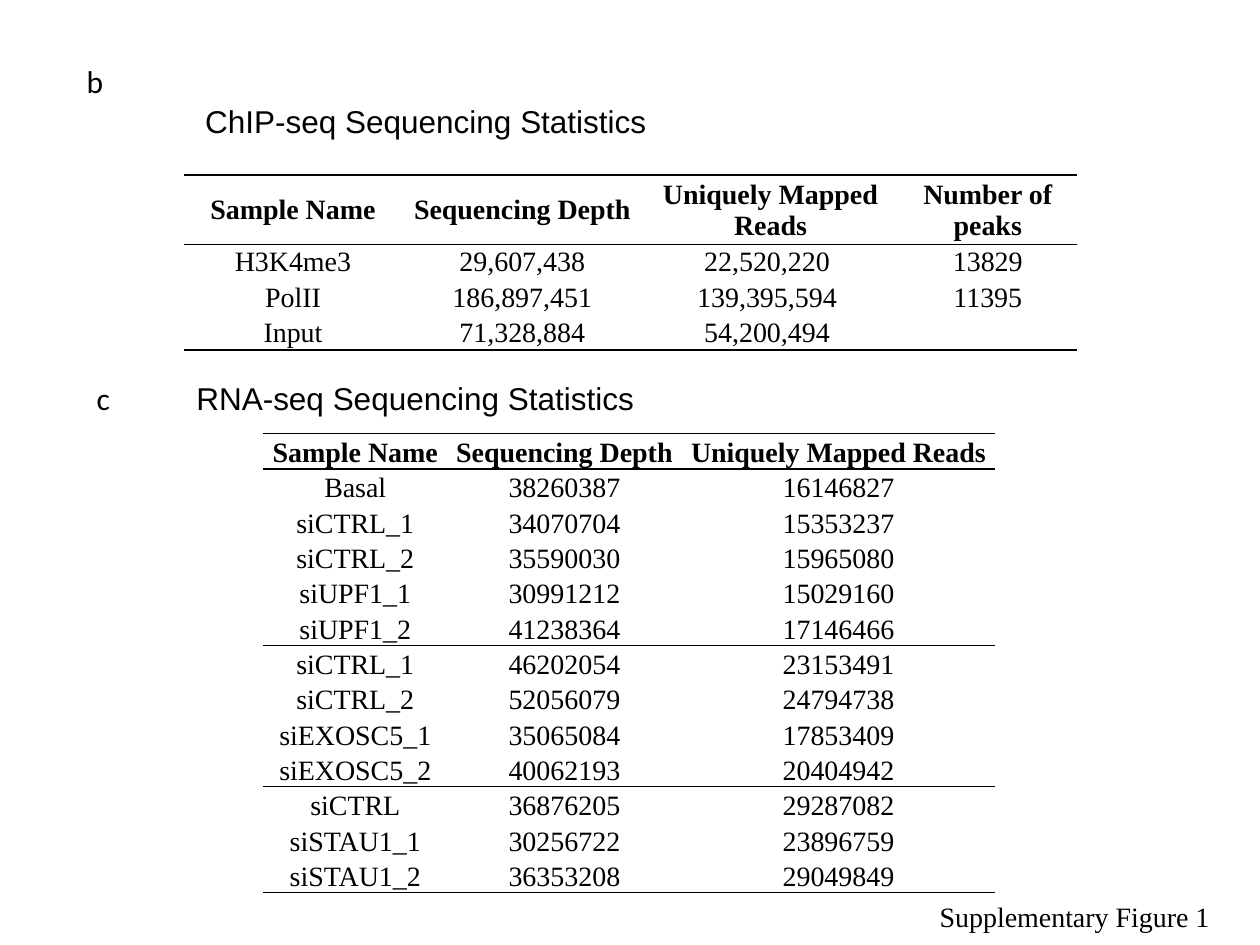
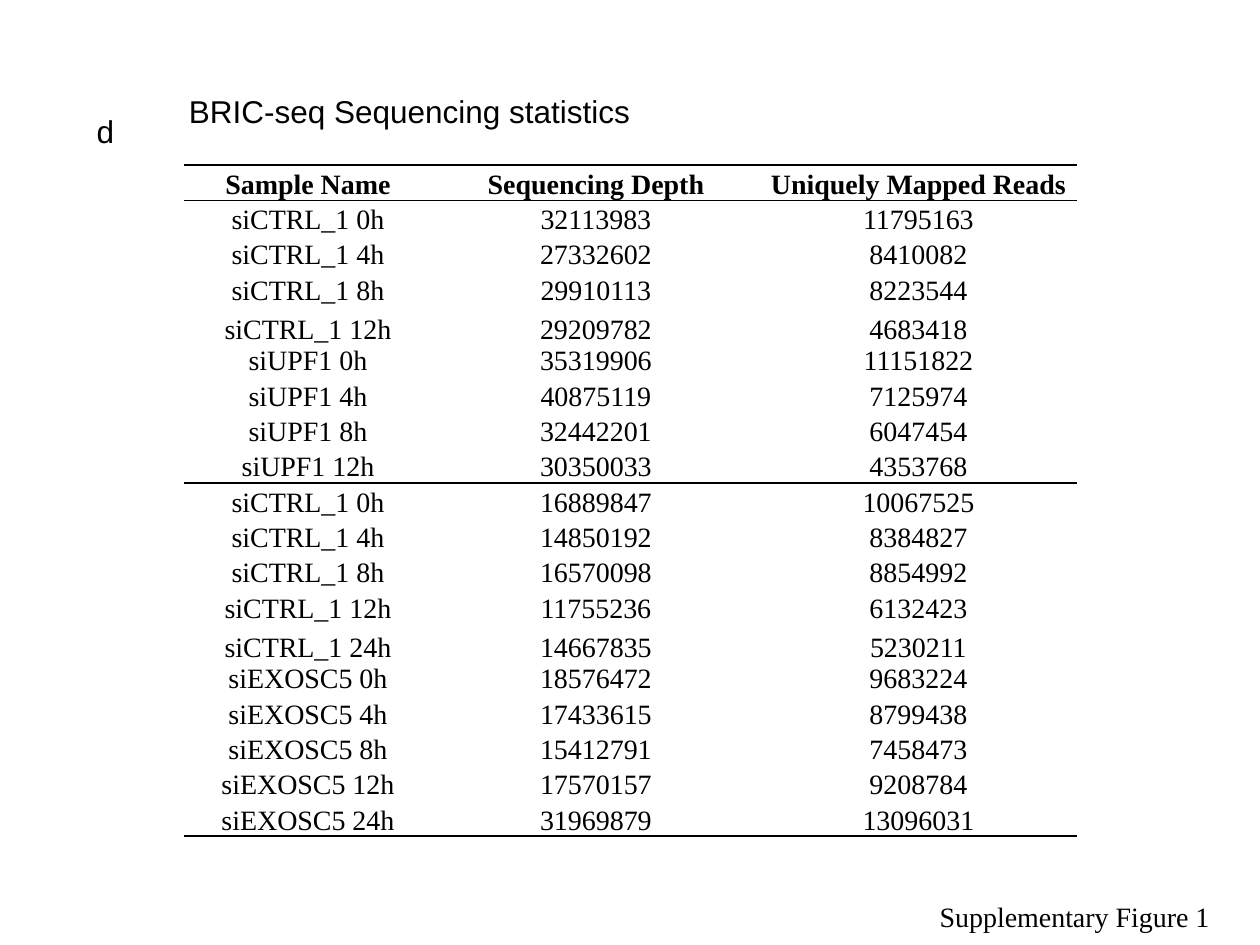
from dataclasses import dataclass

from lxml import etree
from pptx import Presentation
from pptx.dml.color import RGBColor
from pptx.enum.text import MSO_ANCHOR, MSO_AUTO_SIZE, PP_ALIGN
from pptx.oxml.ns import qn
from pptx.slide import Slide
from pptx.table import _Cell
from pptx.util import Pt

LEFT, CENTER = PP_ALIGN.LEFT, PP_ALIGN.CENTER
MIDDLE, BOTTOM = MSO_ANCHOR.MIDDLE, MSO_ANCHOR.BOTTOM
FIT_SHAPE = MSO_AUTO_SIZE.SHAPE_TO_FIT_TEXT


@dataclass(frozen=True)
class Theme:
    ink: str = "000000"
    paper: str = "FFFFFF"
    title_font: str = "Arial"
    letter_font: str = "Calibri"
    table_font: str = "Times New Roman"
    title_size: float = 18
    table_size: float = 16
    rule_width: float = 1
    row_height: float = 20.2


THEME = Theme()


@dataclass(frozen=True)
class Label:
    text: str
    left: float
    top: float
    width: float
    height: float = 28.8
    font: str = THEME.title_font
    size: float = THEME.title_size
    align: PP_ALIGN = LEFT


@dataclass(frozen=True)
class Statistics:
    left: float
    top: float
    columns: tuple[float, ...]
    rows: list[tuple[str, ...]]
    ruled_rows: set[int]
    filled_from: int
    header_height: float = THEME.row_height
    anchor: MSO_ANCHOR = BOTTOM


HEADINGS = ("Sample Name", "Sequencing Depth", "Uniquely Mapped Reads")

CHIP_SEQ = Statistics(
    105.1, 100.1, (124.6, 137.5, 146.2, 102.2),
    [
        (*HEADINGS, "Number of peaks"),
        ("H3K4me3", "29,607,438", "22,520,220 ", "13829"),
        ("PolII", "186,897,451", "139,395,594 ", "11395"),
        ("Input", "71,328,884", "54,200,494 ", ""),
    ],
    ruled_rows={0, 3}, filled_from=0, header_height=39.5, anchor=MIDDLE,
)

RNA_SEQ = Statistics(
    150.5, 247.7, (105.1, 133.9, 179.3),
    [
        HEADINGS,
        ("Basal", "38260387", "16146827"),
        ("siCTRL_1", "34070704", "15353237"),
        ("siCTRL_2", "35590030", "15965080"),
        ("siUPF1_1", "30991212", "15029160"),
        ("siUPF1_2", "41238364", "17146466"),
        ("siCTRL_1", "46202054", "23153491"),
        ("siCTRL_2", "52056079", "24794738"),
        ("siEXOSC5_1", "35065084", "17853409"),
        ("siEXOSC5_2", "40062193", "20404942"),
        ("siCTRL", "36876205", "29287082"),
        ("siSTAU1_1", "30256722", "23896759"),
        ("siSTAU1_2", "36353208", "29049849"),
    ],
    ruled_rows={0, 5, 9, 12}, filled_from=10,
)

BRIC_SEQ = Statistics(
    105.1, 94.3, (141.8, 187.2, 181.4),
    [
        HEADINGS,
        ("siCTRL_1 0h", "32113983", "11795163"),
        ("siCTRL_1 4h", "27332602", "8410082"),
        ("siCTRL_1 8h", "29910113", "8223544"),
        ("siCTRL_1 12h\nsiUPF1 0h", "29209782\n35319906", "4683418\n11151822"),
        ("siUPF1 4h", "40875119", "7125974"),
        ("siUPF1 8h", "32442201", "6047454"),
        ("siUPF1 12h", "30350033", "4353768"),
        ("siCTRL_1 0h", "16889847", "10067525"),
        ("siCTRL_1 4h", "14850192", "8384827"),
        ("siCTRL_1 8h", "16570098", "8854992"),
        ("siCTRL_1 12h", "11755236", "6132423"),
        ("siCTRL_1 24h\nsiEXOSC5 0h", "14667835\n18576472", "5230211\n9683224"),
        ("siEXOSC5 4h", "17433615", "8799438"),
        ("siEXOSC5 8h", "15412791", "7458473"),
        ("siEXOSC5 12h", "17570157", "9208784"),
        ("siEXOSC5 24h", "31969879", "13096031"),
    ],
    ruled_rows={0, 7, 16}, filled_from=17,
)

FIGURE_LABEL = Label("Supplementary Figure 1", 529.9, 510.5, 170.6, 26.6,
                     THEME.table_font, THEME.table_size)

FIGURE_SLIDES = [
    [
        Label("ChIP-seq Sequencing Statistics", 110.2, 54.7, 269.3),
        Label("b", 42.5, 31.7, 23.8, font=THEME.letter_font),
        Label("RNA-seq Sequencing Statistics", 105.1, 213.1, 267.1),
        CHIP_SEQ,
        Label("c", 48.2, 213.1, 22.3, font=THEME.letter_font),
        FIGURE_LABEL,
        RNA_SEQ,
    ],
    [
        Label("BRIC-seq Sequencing statistics", 99.4, 49, 269.3, align=CENTER),
        Label("d", 48.2, 60.5, 24.5),
        BRIC_SEQ,
        FIGURE_LABEL,
    ],
]


def apply_format(target: object, values: dict) -> None:
    for name, value in values.items():
        setattr(target, name, value)


def format_text(frame, font: str, size: float, align: PP_ALIGN, bold: bool = False) -> None:
    for paragraph in frame.paragraphs:
        paragraph.alignment = align
        for run in paragraph.runs:
            apply_format(run.font, {"name": font, "size": Pt(size), "bold": bold})
            run.font.color.rgb = RGBColor.from_string(THEME.ink)
        if not paragraph.runs:
            etree.SubElement(paragraph._p, qn("a:endParaRPr"), sz=str(int(size * 100)))


def draw_label(slide: Slide, label: Label) -> None:
    bounds = map(Pt, (label.left, label.top, label.width, label.height))
    frame = slide.shapes.add_textbox(*bounds).text_frame
    apply_format(frame, {"text": label.text, "word_wrap": False, "auto_size": FIT_SHAPE})
    format_text(frame, label.font, label.size, label.align)


def draw_rules(cell: _Cell, above: bool, below: bool) -> None:
    properties = cell._tc.get_or_add_tcPr()
    for side, ruled in {"L": False, "R": False, "T": above, "B": below}.items():
        edge = etree.SubElement(properties, qn(f"a:ln{side}"), w=str(Pt(THEME.rule_width)))
        if ruled:
            ink = etree.SubElement(edge, qn("a:solidFill"))
            etree.SubElement(ink, qn("a:srgbClr"), val=THEME.ink)
        else:
            etree.SubElement(edge, qn("a:noFill"))


def draw_statistics(slide: Slide, stats: Statistics) -> None:
    heights = [THEME.row_height * (row[0].count("\n") + 1) for row in stats.rows]
    heights[0] = stats.header_height
    bounds = map(Pt, (stats.left, stats.top, sum(stats.columns), sum(heights)))
    table = slide.shapes.add_table(len(heights), len(stats.columns), *bounds).table
    apply_format(table, {"first_row": False, "horz_banding": False})
    for column, width in zip(table.columns, stats.columns):
        column.width = Pt(width)
    cell_format = {
        "vertical_anchor": stats.anchor,
        "margin_left": Pt(0.7),
        "margin_right": Pt(0.7),
        "margin_top": Pt(0.7),
        "margin_bottom": Pt(0),
    }
    for index, (values, height) in enumerate(zip(stats.rows, heights)):
        table.rows[index].height = Pt(height)
        above = index == 0 or index - 1 in stats.ruled_rows
        for cell, value in zip(table.rows[index].cells, values):
            apply_format(cell, {"text": value, **cell_format})
            format_text(cell.text_frame, THEME.table_font, THEME.table_size, CENTER, index == 0)
            draw_rules(cell, above, index in stats.ruled_rows)
            if index >= stats.filled_from:
                cell.fill.solid()
                cell.fill.fore_color.rgb = RGBColor.from_string(THEME.paper)
            else:
                cell.fill.background()


def main() -> None:
    deck = Presentation()
    apply_format(deck, {"slide_width": Pt(720), "slide_height": Pt(540)})
    draw = {Label: draw_label, Statistics: draw_statistics}
    for elements in FIGURE_SLIDES:
        slide = deck.slides.add_slide(deck.slide_layouts[6])
        for element in elements:
            draw[type(element)](slide, element)
    deck.save("out.pptx")


if __name__ == "__main__":
    main()
